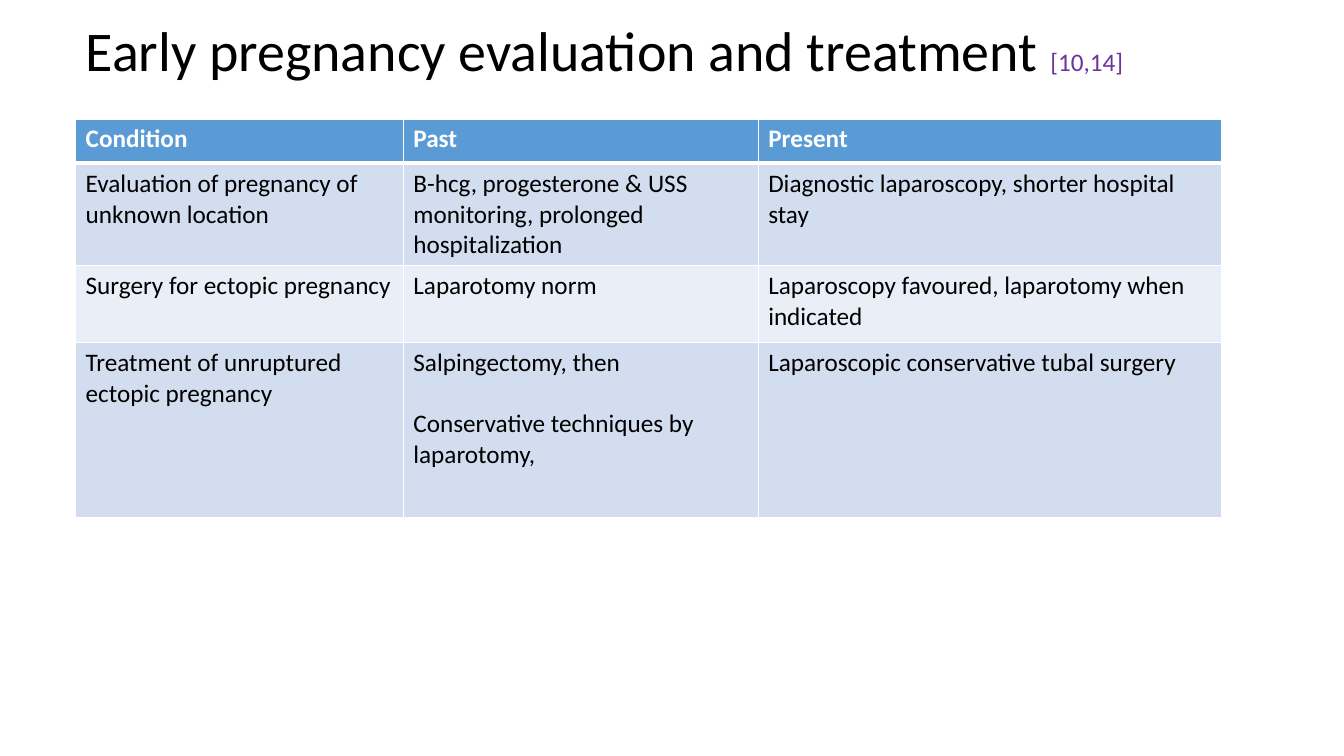
import dataclasses

import lxml.etree
import pptx
import pptx.dml.color
import pptx.enum.text
import pptx.oxml.ns
import pptx.util


@dataclasses.dataclass(frozen=True)
class Theme:
    """Colours, font and type sizes of the slide."""

    font: str = "Calibri"
    text: str = "000000"
    white: str = "FFFFFF"
    citation: str = "7030A0"
    header: str = "5B9BD5"
    bands: tuple = ("D2DEEF", "EAEFF7")
    title_size: int = 40
    body_size: int = 18
    line_gap: int = 22


THEME = Theme()
TITLE = ("Early pregnancy evaluation and treatment ", "[10,14]")
COLUMN_WIDTHS = (3.25, 3.52, 4.6)
ROW_HEIGHTS = (0.44, 0.99, 0.76, 1.74)
ROWS = (
    ("Condition", "Past", "Present"),
    (
        "Evaluation of pregnancy of unknown location",
        "Β-hcg, progesterone & USS monitoring, prolonged hospitalization",
        "Diagnostic laparoscopy, shorter hospital stay",
    ),
    (
        "Surgery for ectopic pregnancy",
        "Laparotomy norm",
        "Laparoscopy favoured, laparotomy when indicated",
    ),
    (
        "Treatment of unruptured ectopic pregnancy",
        "Salpingectomy, then\nConservative techniques by laparotomy,",
        "Laparoscopic conservative tubal surgery",
    ),
)


def rgb(value):
    """Return a colour object for a hexadecimal value."""
    return pptx.dml.color.RGBColor.from_string(value)


def format_font(font, size, colour, bold=False):
    """Apply the theme font with a size, colour and weight."""
    font.name = THEME.font
    font.size = pptx.util.Pt(size)
    font.color.rgb = rgb(colour)
    font.bold = bold


def add_title(slide, left, top, width, height):
    """Place the title and its citation in the given box."""
    title = slide.shapes.title
    title.left, title.top, title.width, title.height = map(
        pptx.util.Inches, (left, top, width, height)
    )
    frame = title.text_frame
    frame.word_wrap = True
    frame.auto_size = pptx.enum.text.MSO_AUTO_SIZE.NONE
    frame.vertical_anchor = pptx.enum.text.MSO_ANCHOR.MIDDLE
    paragraph = frame.paragraphs[0]
    paragraph.alignment = pptx.enum.text.PP_ALIGN.LEFT
    paragraph.line_spacing = 0.9
    styles = ((THEME.title_size, THEME.text), (THEME.body_size, THEME.citation))
    for text, (size, colour) in zip(TITLE, styles):
        run = paragraph.add_run()
        run.text = text
        format_font(run.font, size, colour)


def add_borders(cell, widths):
    """Draw white cell borders from a mapping of side to width in points."""
    properties = cell._tc.get_or_add_tcPr()
    for side, width in widths.items():
        line = lxml.etree.SubElement(
            properties,
            pptx.oxml.ns.qn(f"a:ln{side}"),
            w=str(pptx.util.Pt(width)),
        )
        fill = lxml.etree.SubElement(line, pptx.oxml.ns.qn("a:solidFill"))
        lxml.etree.SubElement(fill, pptx.oxml.ns.qn("a:srgbClr"), val=THEME.white)


def format_cell(cell, text, row_index):
    """Fill one cell with its text, band colour and borders."""
    is_header = row_index == 0
    widths = {"L": 1, "R": 1, "T": 3 if row_index == 1 else 1, "B": 3 if is_header else 1}
    add_borders(cell, widths)
    cell.fill.solid()
    band = THEME.bands[(row_index - 1) % len(THEME.bands)]
    cell.fill.fore_color.rgb = rgb(THEME.header if is_header else band)
    cell.text = text
    for index, paragraph in enumerate(cell.text_frame.paragraphs):
        colour = THEME.white if is_header else THEME.text
        format_font(paragraph.font, THEME.body_size, colour, is_header)
        if index:
            paragraph.space_before = pptx.util.Pt(THEME.line_gap)


def add_comparison_table(slide, left, top, width, height):
    """Build the past and present comparison in the given box."""
    box = map(pptx.util.Inches, (left, top, width, height))
    table = slide.shapes.add_table(len(ROWS), len(COLUMN_WIDTHS), *box).table
    for column, share in zip(table.columns, COLUMN_WIDTHS):
        column.width = pptx.util.Inches(width * share / sum(COLUMN_WIDTHS))
    for row_index, (row, share) in enumerate(zip(table.rows, ROW_HEIGHTS)):
        row.height = pptx.util.Inches(height * share / sum(ROW_HEIGHTS))
        for cell, text in zip(row.cells, ROWS[row_index]):
            format_cell(cell, text, row_index)


def main():
    """Create and save the presentation."""
    presentation = pptx.Presentation()
    presentation.slide_width = pptx.util.Inches(13.33)
    presentation.slide_height = pptx.util.Inches(7.5)
    slide = presentation.slides.add_slide(presentation.slide_layouts[5])
    left, width = 0.75, 11.37
    add_title(slide, left, 0.14, width, 0.77)
    add_comparison_table(slide, left, 1.18, width, 3.93)
    presentation.save("out.pptx")


if __name__ == "__main__":
    main()
